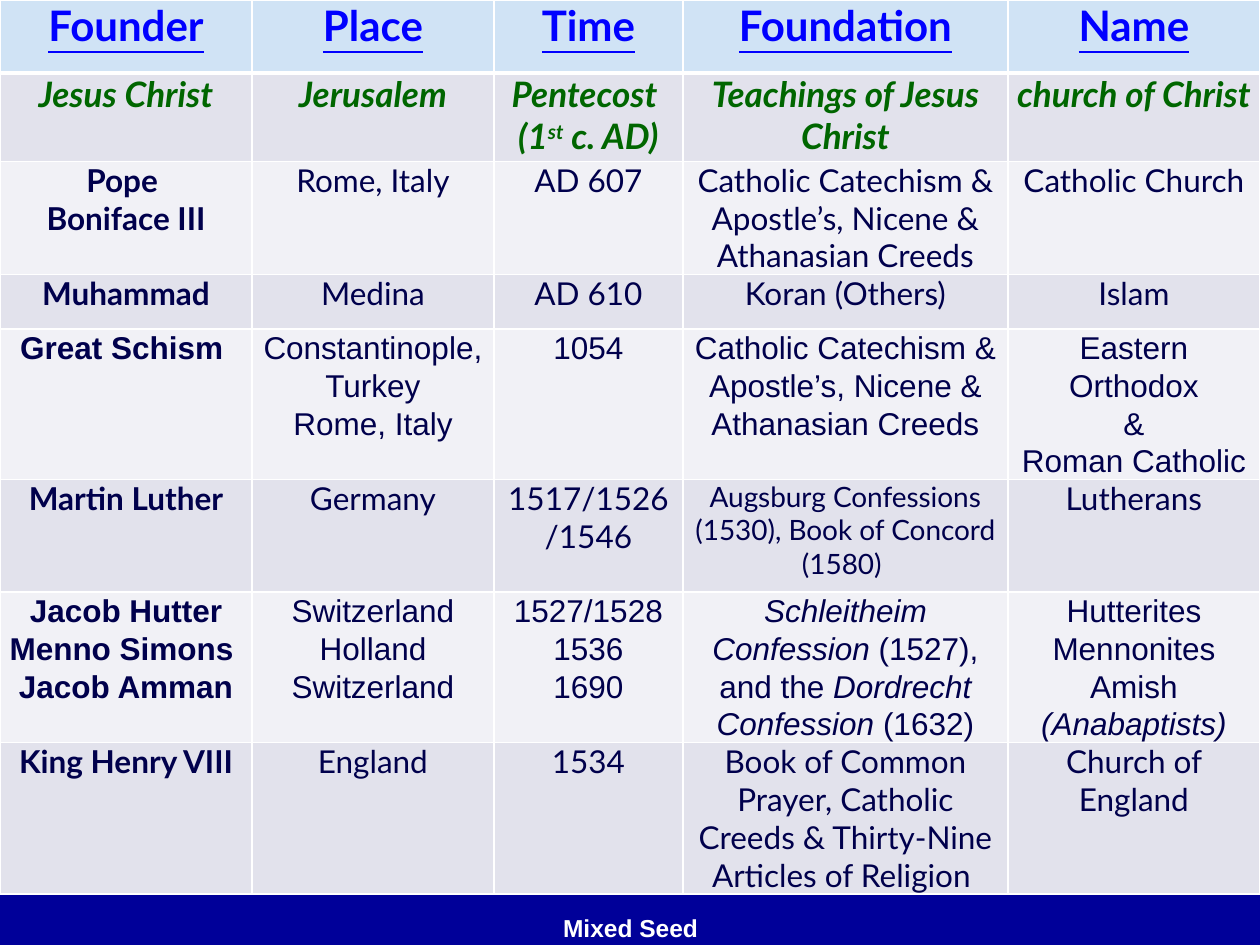
from pptx import Presentation
from pptx.util import Inches, Pt
from pptx.dml.color import RGBColor
from pptx.enum.text import PP_ALIGN, MSO_ANCHOR
from lxml.etree import fromstring

NS = "http://schemas.openxmlformats.org/drawingml/2006/main"
COLS = [2, 1.92, 1.5, 2.58, 2]
HEIGHTS = [0.58, 0.7, 0.89, 0.43, 0.89, 0.89, 0.89, 0.89]
ARIAL_ROWS = (4, 6)
ROWS = [
    ["Founder", "Place", "Time", "Foundation", "Name"],
    ["Jesus Christ", "Jerusalem", "Pentecost \n(1^st^ c. AD)",
     "Teachings of Jesus Christ", "church of Christ"],
    ["Pope \nBoniface III", "Rome, Italy", "AD 607",
     "Catholic Catechism & Apostle’s, Nicene & Athanasian Creeds", "Catholic Church"],
    ["Muhammad", "Medina", "AD 610", "Koran (Others)", "Islam"],
    ["Great Schism ", "Constantinople, Turkey\nRome, Italy", "1054",
     "Catholic Catechism & Apostle’s, Nicene & Athanasian Creeds",
     "Eastern Orthodox\n&\nRoman Catholic"],
    ["Martin Luther", "Germany", "1517/1526/1546",
     "Augsburg Confessions (1530), Book of Concord (1580) ", "Lutherans"],
    ["Jacob Hutter\nMenno Simons \nJacob Amman", "Switzerland\nHolland\nSwitzerland",
     "1527/1528\n1536\n1690",
     "*Schleitheim Confession* (1527), and the *Dordrecht Confession* (1632)",
     "Hutterites\nMennonites\nAmish\n*(Anabaptists)*"],
    ["King Henry VIII", "England", "1534",
     "Book of Common Prayer, Catholic Creeds & Thirty-Nine Articles of Religion ",
     "Church of England"],
]


def paint(color, value):
    color.rgb = RGBColor.from_string(value)


def write(p, text, font, size, color, bold):
    mark = "^" if "^" in text else "*"
    for k, part in enumerate(text.split(mark)):
        if part:
            r = p.add_run()
            r.text = part
            if k % 2 and mark == "*":
                r.font.italic = True
            elif k % 2:
                r._r.get_or_add_rPr().set("baseline", "30000")
    p.alignment = PP_ALIGN.CENTER
    p.font.name, p.font.size, p.font.bold = font, Pt(size), bold
    paint(p.font.color, color)


prs = Presentation()
prs.slide_width, prs.slide_height = Inches(10), Inches(7.5)
s = prs.slides.add_slide(prs.slide_layouts[6])
s.background.fill.solid()
paint(s.background.fill.fore_color, "000099")

frame = s.shapes.add_table(len(ROWS), len(COLS), 0, 0, Inches(10), Inches(7.22))
table = frame.table
for col, width in zip(table.columns, COLS):
    col.width = Inches(width)
for row, height in zip(table.rows, HEIGHTS):
    row.height = Inches(height)
frame.height = Inches(7.22)

for i, texts in enumerate(ROWS):
    arial = i in ARIAL_ROWS
    fill = "D0E3F5" if i == 0 else "E2E2EC" if i % 2 else "F1F1F6"
    color = {0: "0000FF", 1: "006600"}.get(i, "00004C")
    for j, text in enumerate(texts):
        cell = table.cell(i, j)
        cell.margin_left = cell.margin_right = Inches(0.07 if arial else 0.06)
        cell.margin_top = cell.margin_bottom = 0
        cell.fill.solid()
        paint(cell.fill.fore_color, fill)
        size = 16 if (i, j) == (5, 3) else {0: 24, 1: 20}.get(i, 18)
        tf = cell.text_frame
        for n, line in enumerate(text.split("\n")):
            p = tf.add_paragraph() if n else tf.paragraphs[0]
            write(p, line, "Arial" if arial else "Lato", size, color, i < 2 or j == 0)
            if i == 0:
                p.font.underline = True
            if i == 1:
                p.font.italic = True
            if arial:
                p.line_spacing = 1.07
        tcPr = cell._tc.get_or_add_tcPr()
        for k, side in enumerate("LRTB"):
            weight = 3 if (i, side) in ((0, "B"), (1, "T")) else 1
            tcPr.insert(k, fromstring(
                f'<a:ln{side} xmlns:a="{NS}" w="{Pt(weight)}"><a:solidFill>'
                f'<a:srgbClr val="FFFFFF"/></a:solidFill></a:ln{side}>'))

caption = s.shapes.add_textbox(Inches(3.42), Inches(7.2), Inches(3.17), Inches(0.3))
tf = caption.text_frame
tf.word_wrap = True
tf.vertical_anchor = MSO_ANCHOR.TOP
write(tf.paragraphs[0], "Mixed Seed", "Arial", 14, "FFFFFF", True)

prs.save("out.pptx")
